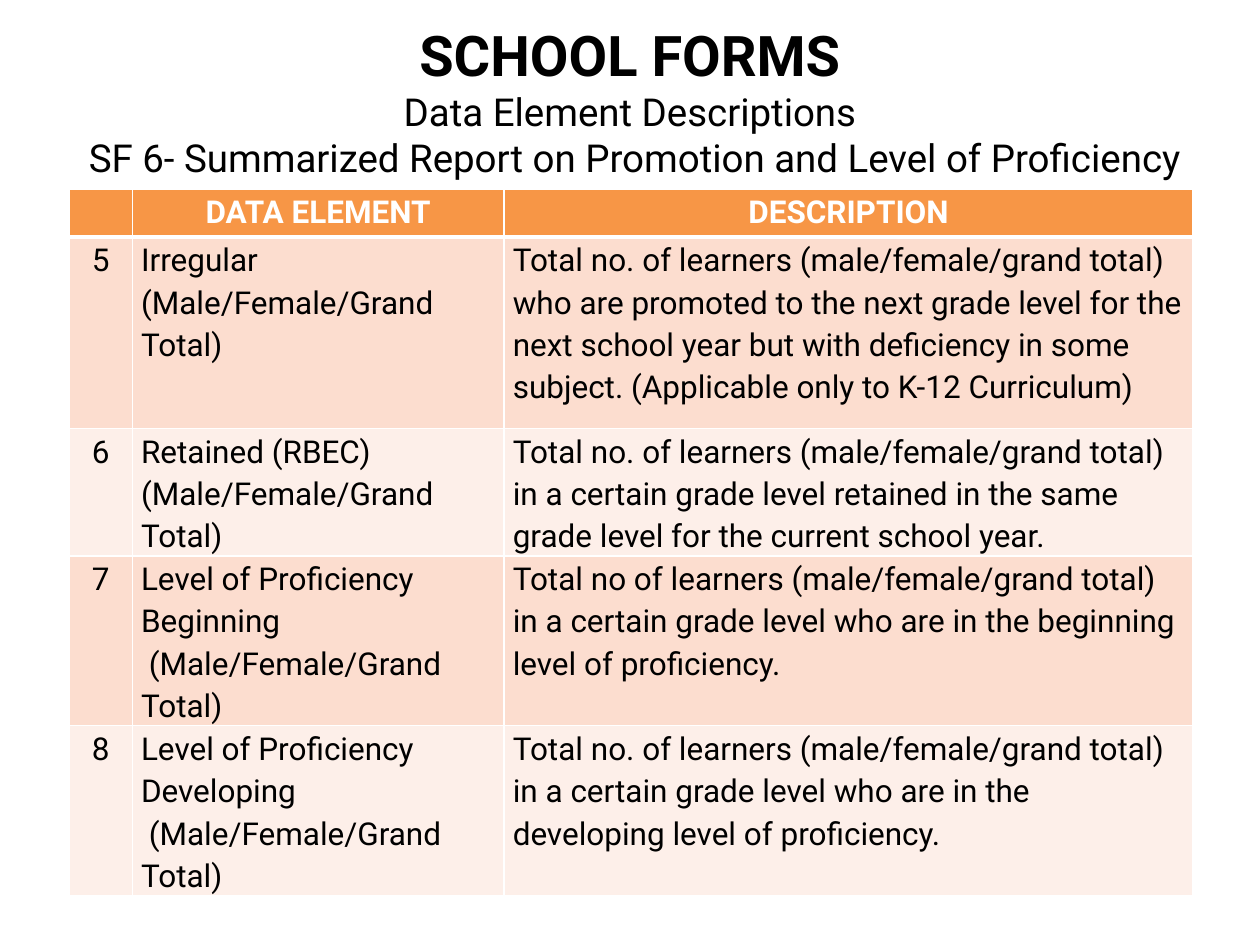
from typing import NamedTuple

from lxml import etree
from pptx import Presentation
from pptx.dml.color import RGBColor
from pptx.enum.text import MSO_ANCHOR, PP_ALIGN
from pptx.oxml.ns import qn
from pptx.util import Inches, Pt

CENTER, LEFT = PP_ALIGN.CENTER, PP_ALIGN.LEFT
MIDDLE = MSO_ANCHOR.MIDDLE
TITLE_ONLY = 5

BLACK = RGBColor(0x00, 0x00, 0x00)
WHITE = RGBColor(0xFF, 0xFF, 0xFF)
ORANGE = RGBColor(0xF7, 0x96, 0x46)
PEACH = RGBColor(0xFC, 0xDD, 0xCF)
PALE_PEACH = RGBColor(0xFD, 0xEF, 0xE9)

FONT = "Roboto"
COLUMN_WIDTHS = (0.5, 2.95, 5.47)
ROW_HEIGHTS = (0.38, 1.52, 0.77, 0.98, 0.97)
COLUMN_ALIGNS = (CENTER, LEFT, LEFT)


class Element(NamedTuple):
    number: str
    name: str
    description: str


HEADER = Element("", "DATA ELEMENT", "DESCRIPTION")
ELEMENTS = (
    Element("5", "Irregular",
            "Total no. of learners (male/female/grand total) who are promoted to the "
            "next grade level for the next school year but with deficiency in some "
            "subject. (Applicable only to K-12 Curriculum)"),
    Element("6", "Retained (RBEC)",
            "Total no. of learners (male/female/grand total) in a certain grade level "
            "retained in the same grade level for the current school year."),
    Element("7", "Level of Proficiency\nBeginning",
            "Total no of learners (male/female/grand total) in a certain grade level "
            "who are in the beginning level of proficiency."),
    Element("8", "Level of Proficiency\nDeveloping",
            "Total no. of learners (male/female/grand total) in a certain grade level "
            "who are in the developing level of proficiency."),
)


def add_text(p, text: str, *, size=18, color=BLACK, bold=False, align=LEFT, spacing=None):
    """Append text to a paragraph, turning each newline into a line break."""
    p.alignment = align
    if spacing:
        p.line_spacing = spacing
    for i, line in enumerate(text.split("\n")):
        if i:
            p.add_line_break()
        if line:
            r = p.add_run()
            r.text = line
            r.font.name, r.font.size, r.font.bold = FONT, Pt(size), bold
            r.font.color.rgb = color
    p.font.size = Pt(size)


def set_borders(cell, bottom: float) -> None:
    tc_pr = cell._tc.get_or_add_tcPr()
    for i, (side, width) in enumerate((("L", 1), ("R", 1), ("T", 1), ("B", bottom))):
        ln = etree.Element(qn(f"a:ln{side}"), w=str(Pt(width)))
        fill = etree.SubElement(ln, qn("a:solidFill"))
        etree.SubElement(fill, qn("a:srgbClr"), val=str(WHITE))
        tc_pr.insert(i, ln)


def fill_cell(cell, paragraphs: list[str], fill: RGBColor, *, bottom=1, **text_format) -> None:
    cell.margin_left = cell.margin_right = Inches(0.07)
    cell.margin_top = cell.margin_bottom = 0
    cell.fill.solid()
    cell.fill.fore_color.rgb = fill
    set_borders(cell, bottom)
    tf = cell.text_frame
    for i, text in enumerate(paragraphs):
        p = tf.add_paragraph() if i else tf.paragraphs[0]
        add_text(p, text, spacing=1.15, **text_format)


def add_title(s) -> None:
    title = s.shapes.title
    title.left, title.top = Inches(0.5), Inches(0.17)
    title.width, title.height = Inches(9), Inches(1.25)
    tf = title.text_frame
    tf.word_wrap = True
    tf.vertical_anchor = MIDDLE
    p = tf.paragraphs[0]
    add_text(p, "SCHOOL FORMS\n", size=32, bold=True, align=CENTER)
    add_text(p, "Data Element Descriptions\n"
                " SF 6- Summarized Report on Promotion and Level of Proficiency",
             size=22, align=CENTER)


def add_element_table(s) -> None:
    table = s.shapes.add_table(
        len(ROW_HEIGHTS), len(COLUMN_WIDTHS), Inches(0.55), Inches(1.5),
        Inches(sum(COLUMN_WIDTHS)), Inches(sum(ROW_HEIGHTS))).table
    for column, width in zip(table.columns, COLUMN_WIDTHS):
        column.width = Inches(width)
    for row, height in zip(table.rows, ROW_HEIGHTS):
        row.height = Inches(height)

    for cell, text in zip(table.rows[0].cells, HEADER):
        fill_cell(cell, [text], ORANGE, bottom=3, color=WHITE, bold=True, align=CENTER)
    for i, element in enumerate(ELEMENTS):
        fill = PALE_PEACH if i % 2 else PEACH
        indent = " " if "\n" in element.name else ""
        columns = ([element.number],
                   [element.name, indent + "(Male/Female/Grand Total)"],
                   [element.description])
        for cell, paragraphs, align in zip(table.rows[i + 1].cells, columns, COLUMN_ALIGNS):
            fill_cell(cell, paragraphs, fill, align=align)


def main() -> None:
    prs = Presentation()
    prs.slide_width, prs.slide_height = Inches(10), Inches(7.5)
    s = prs.slides.add_slide(prs.slide_layouts[TITLE_ONLY])
    add_title(s)
    add_element_table(s)
    prs.save("out.pptx")


if __name__ == "__main__":
    main()
